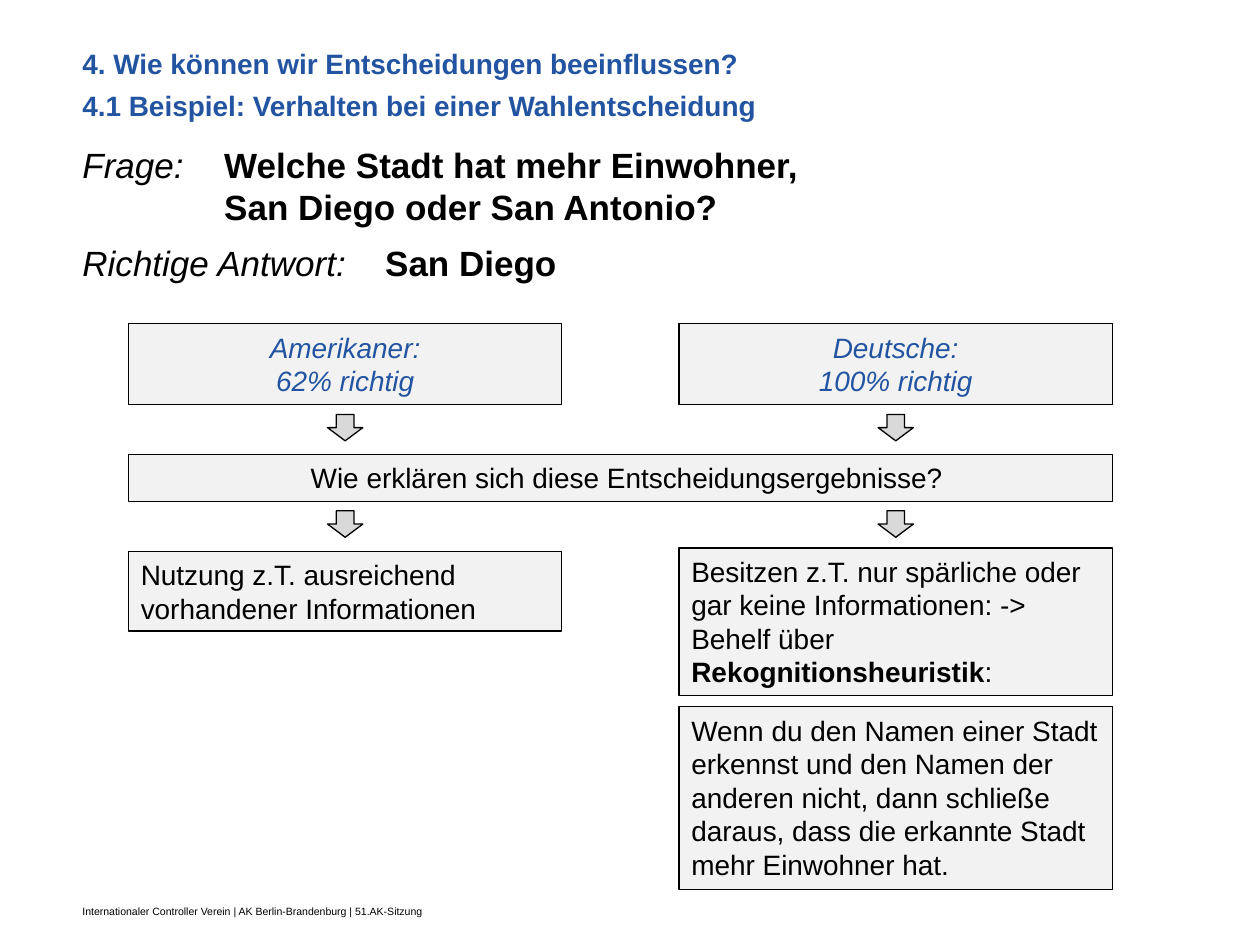
from pptx import Presentation
from pptx.dml.color import RGBColor
from pptx.enum.shapes import MSO_SHAPE
from pptx.enum.text import MSO_ANCHOR, PP_ALIGN
from pptx.util import Pt

RECT, DOWN_ARROW = MSO_SHAPE.RECTANGLE, MSO_SHAPE.DOWN_ARROW
TOP, MIDDLE = MSO_ANCHOR.TOP, MSO_ANCHOR.MIDDLE
LEFT, CENTER = PP_ALIGN.LEFT, PP_ALIGN.CENTER

COLORS = {"blue": "2254A1", "black": "000000", "box": "F2F2F2", "arrow": "D9D9D9"}
FONT = "Arial"
COLUMN_W = 247.7
ARROW_W, ARROW_H = 20.2, 15.1


def color(name):
    return RGBColor.from_string(COLORS[name])


def style(font, size, name="black", bold=False, italic=False):
    font.name, font.size = FONT, Pt(size)
    font.bold, font.italic = bold, italic
    font.color.rgb = color(name)


def add_runs(p, runs, size, name="black"):
    """Add (text, bold, italic) runs to a paragraph."""
    for text, bold, italic in runs:
        p.add_run().text = text
        style(p.runs[-1].font, size, name, bold, italic)


def add_text(s, x, y, w, h, text, size, name="black", bold=False, wrap=True):
    tf = s.shapes.add_textbox(Pt(x), Pt(y), Pt(w), Pt(h)).text_frame
    tf.word_wrap = wrap
    p = tf.paragraphs[0]
    p.text = text
    for r in p.runs:
        style(r.font, size, name, bold)


def add_statement(s, x, y, w, h, label, lines, hang):
    """Italic label with bold lines that hang at a common indent."""
    tf = s.shapes.add_textbox(Pt(x), Pt(y), Pt(w), Pt(h)).text_frame
    tf.word_wrap = True
    p = tf.paragraphs[0]
    pPr = p._p.get_or_add_pPr()
    pPr.set("marL", str(Pt(hang)))
    pPr.set("indent", str(-Pt(hang)))
    add_runs(p, [(label + "\t", False, True)], 20)
    for i, line in enumerate(lines):
        if i:
            p.add_line_break()
        add_runs(p, [(line, True, False)], 20)


def add_shape(s, kind, x, y, w, h, fill):
    sp = s.shapes.add_shape(kind, Pt(x), Pt(y), Pt(w), Pt(h))
    sp.shadow.inherit = False
    sp.fill.solid()
    sp.fill.fore_color.rgb = color(fill)
    sp.line.color.rgb = color("black")
    sp.line.width = Pt(0.75)
    return sp


def add_box(s, x, y, w, h, paragraphs, align=LEFT, name="black", anchor=TOP):
    tf = add_shape(s, RECT, x, y, w, h, "box").text_frame
    tf.word_wrap = True
    tf.vertical_anchor = anchor
    for i, runs in enumerate(paragraphs):
        p = tf.add_paragraph() if i else tf.paragraphs[0]
        p.alignment = align
        add_runs(p, runs, 16, name)
    return tf


def add_column(s, x, y, group, result, explanations):
    """Result box, two arrows and the explanation boxes of one group."""
    add_box(s, x, y, COLUMN_W, 46.1,
            [[(group, False, True)], [(result, False, True)]], CENTER, "blue", MIDDLE)
    arrow_x = x + (COLUMN_W - ARROW_W) / 2
    for dy in (51.8, 106.9):
        add_shape(s, DOWN_ARROW, arrow_x, y + dy, ARROW_W, ARROW_H, "arrow")
    for dy, h, runs in explanations:
        add_box(s, x, y + dy, COLUMN_W, h, [runs])


def add_header(s, x, y):
    add_text(s, x, y, 557, 28, "4. Wie können wir Entscheidungen beeinflussen?",
             16, "blue", True)
    add_text(s, x, y + 24, 557, 32,
             "4.1 Beispiel: Verhalten bei einer Wahlentscheidung", 16, "blue", True)
    add_statement(s, x, y + 55.5, 666, 55.4, "Frage:",
                  ["Welche Stadt hat mehr Einwohner,", "San Diego oder San Antonio?"], 81)
    add_statement(s, x, y + 111.6, 666, 31.7, "Richtige Antwort:", ["San Diego"], 173)


def add_comparison(s, x, y, w):
    add_column(s, x, y, "Amerikaner:", "62% richtig", [
        (130.3, 45.4, [("Nutzung z.T. ausreichend vorhandener Informationen", False, False)]),
    ])
    add_column(s, x + w - COLUMN_W, y, "Deutsche:", "100% richtig", [
        (128.2, 84.2, [
            ("Besitzen z.T. nur spärliche oder gar keine Informationen: -> Behelf über ",
             False, False),
            ("Rekognitionsheuristik", True, False),
            (":", False, False)]),
        (218.9, 104.4, [
            ("Wenn du den Namen einer Stadt erkennst und den Namen der anderen nicht, "
             "dann schließe daraus, dass die erkannte Stadt mehr Einwohner hat.",
             False, False)]),
    ])
    tf = add_box(s, x, y + 74.9, w, 26.6,
                 [[("Wie erklären sich diese Entscheidungsergebnisse?", False, False)]], CENTER)
    tf.margin_right = 0


def main():
    prs = Presentation()
    prs.slide_width, prs.slide_height = Pt(720), Pt(540)
    s = prs.slides.add_slide(prs.slide_layouts[6])
    add_header(s, 40, 23)
    add_comparison(s, 73.4, 185, 562.3)
    add_text(s, 40, 513.4, 212.4, 14.4,
             "Internationaler Controller Verein | AK Berlin-Brandenburg | 51.AK-Sitzung",
             6, wrap=False)
    prs.save("out.pptx")


if __name__ == "__main__":
    main()
